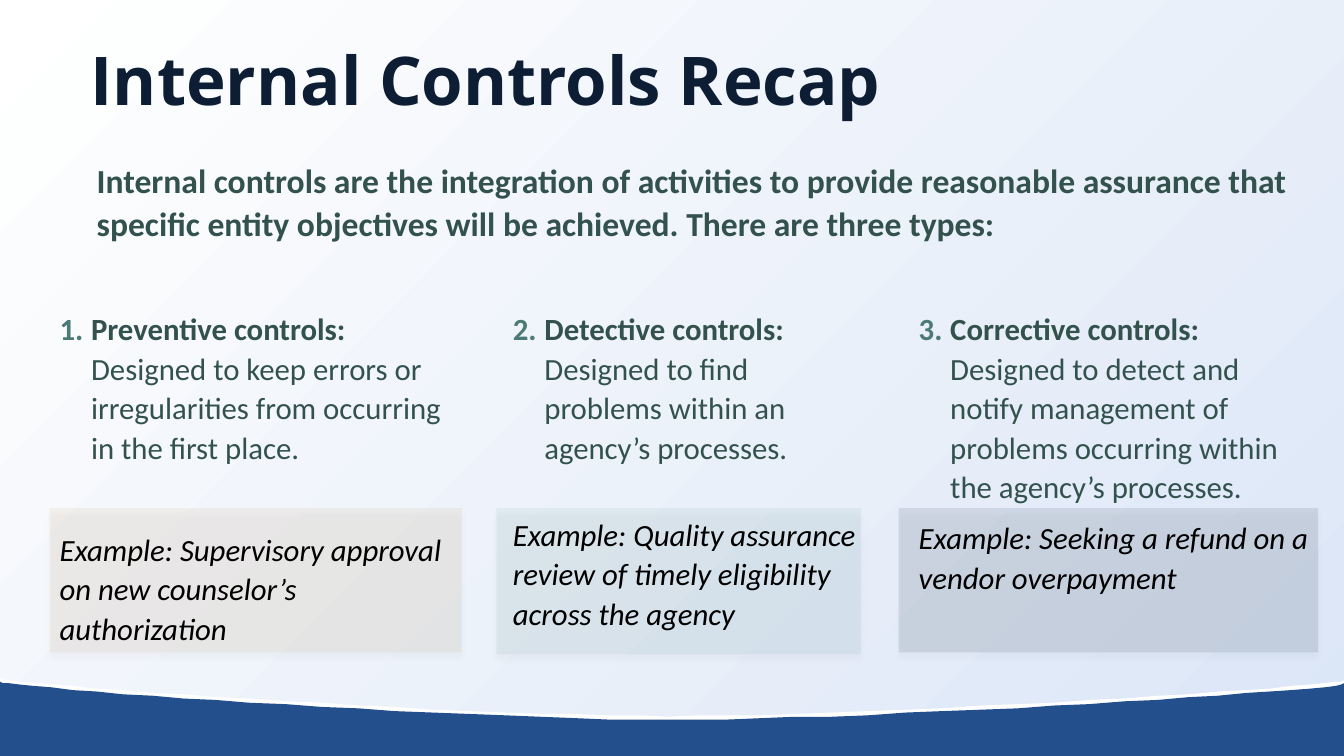
import dataclasses

import lxml.etree
import pptx
import pptx.dml.color
import pptx.enum.shapes
import pptx.enum.text
import pptx.oxml.ns
import pptx.util

Pt = pptx.util.Pt
qn = pptx.oxml.ns.qn
WIDE, HIGH = 960, 540
COLORS = {
    "navy": "0D1D34", "teal": "68A19B", "tan": "C7975E", "wave": "234F8D",
    "body": "33524E", "number": "4C7A76", "black": "000000",
    "white": "FFFFFF", "sky": "DBE6F6",
}


@dataclasses.dataclass
class Control:
    """One column; gap is the space between its meaning and its example."""
    name: str
    meaning: str
    example: str
    left: float
    width: float
    gap: float
    panel: tuple[float, float, float]
    color: str


CONTROLS = [
    Control("Preventive controls:",
            "Designed to keep errors or irregularities from occurring in the first place.",
            "Example: Supervisory approval on new counselor’s authorization",
            35.5, 301.5, 36.5, (35.5, 294.5, 103), "tan"),
    Control("Detective controls:",
            "Designed to find problems within an agency’s processes.",
            "Example: Quality assurance review of timely eligibility across the agency",
            359.3, 266.5, 26, (354.5, 260.5, 104.5), "teal"),
    Control("Corrective controls:",
            "Designed to detect and notify management of problems occurring within "
            "the agency’s processes.",
            "Example: Seeking a refund on a vendor overpayment",
            649.2, 299.5, 0, (642, 299.5, 103), "navy"),
]


def tint(name: str) -> pptx.dml.color.RGBColor:
    return pptx.dml.color.RGBColor.from_string(COLORS[name])


def child(parent, tag: str, **attrs):
    node = lxml.etree.SubElement(parent, qn(tag))
    for key, value in attrs.items():
        node.set(key, str(value))
    return node


def write(para, text: str, *, size: float = 22, color: str = "body",
          font: str = "Calibri", bold: bool = False, italic: bool = False) -> None:
    run = para.add_run()
    run.text = text
    run.font.size, run.font.name = Pt(size), font
    run.font.bold, run.font.italic = bold, italic
    run.font.color.rgb = tint(color)


def space(para, lines: float = 1.07, before: float = 0, after: float = 8) -> None:
    para.alignment = pptx.enum.text.PP_ALIGN.LEFT
    para.line_spacing = lines
    para.space_before, para.space_after = Pt(before), Pt(after)


def number(para, start: int) -> None:
    """Give the paragraph a hanging number."""
    props = para._p.get_or_add_pPr()
    props.set("marL", str(Pt(22.5)))
    props.set("indent", str(-Pt(22.5)))
    child(child(props, "a:buClr"), "a:srgbClr", val=COLORS["number"])
    child(props, "a:buAutoNum", type="arabicPeriod", startAt=start)


def add_box(slide, left: float, top: float, width: float, height: float):
    box = slide.shapes.add_textbox(Pt(left), Pt(top), Pt(width), Pt(height))
    box.text_frame.word_wrap = True
    return box.text_frame


def add_panel(slide, item: Control) -> None:
    left, width, height = item.panel
    panel = slide.shapes.add_shape(pptx.enum.shapes.MSO_SHAPE.RECTANGLE,
                                   Pt(left), Pt(363), Pt(width), Pt(height))
    panel.line.fill.background()
    panel.fill.solid()
    panel.fill.fore_color.rgb = tint(item.color)
    props = panel._element.spPr
    child(props.find(qn("a:solidFill"))[0], "a:alpha", val=10000)
    shade = child(child(props, "a:effectLst"), "a:outerShdw", blurRad=Pt(4),
                  dist=Pt(4), dir=5400000, algn="t", rotWithShape=0)
    child(child(shade, "a:srgbClr", val=COLORS["black"]), "a:alpha", val=25000)


def add_column(slide, item: Control, start: int) -> None:
    frame = add_box(slide, item.left, 216, item.width, 240)
    first = frame.paragraphs[0]
    number(first, start)
    space(first)
    write(first, item.name, bold=True)
    first.add_line_break()
    write(first, item.meaning)
    second = frame.add_paragraph()
    space(second, before=item.gap)
    write(second, item.example, color="black", italic=True)


def curve(points: list[tuple[float, float]], steps: int = 24) -> list[tuple[float, float]]:
    """Sample a cubic curve from its four control points."""
    result = []
    for step in range(steps + 1):
        t = step / steps
        parts = ((1 - t) ** 3, 3 * t * (1 - t) ** 2, 3 * t * t * (1 - t), t ** 3)
        result.append(tuple(sum(p * point[axis] for p, point in zip(parts, points))
                            for axis in (0, 1)))
    return result


def add_wave(slide, color: str, lift: float) -> None:
    left = curve([(0, 487), (0, 490.5), (317, 514), (477, 514)])
    right = curve([(477, 514), (637, 514), (WIDE, 492.5), (WIDE, 488.5)])
    edge = [(x, y - lift) for x, y in left + right[1:]]
    path = slide.shapes.build_freeform(*edge[0], scale=Pt(1))
    path.add_line_segments(edge[1:] + [(WIDE, HIGH), (0, HIGH)])
    wave = path.convert_to_shape()
    wave.shadow.inherit = False
    wave.fill.solid()
    wave.fill.fore_color.rgb = tint(color)
    wave.line.fill.background()


def set_title(slide) -> None:
    title = slide.shapes.title
    title.left, title.top, title.width, title.height = map(Pt, (57.6, 28.8, 854.6, 60.5))
    frame = title.text_frame
    frame.auto_size = pptx.enum.text.MSO_AUTO_SIZE.NONE
    frame.vertical_anchor = pptx.enum.text.MSO_ANCHOR.BOTTOM
    space(frame.paragraphs[0], lines=0.9, after=0)
    write(frame.paragraphs[0], "Internal Controls Recap", size=48,
          color="navy", font="Open Sans", bold=True)


def main() -> None:
    deck = pptx.Presentation()
    deck.slide_width, deck.slide_height = Pt(WIDE), Pt(HIGH)
    slide = deck.slides.add_slide(deck.slide_layouts[5])
    back = slide.background.fill
    back.gradient()
    back.gradient_angle = 135
    for stop, color in zip(back.gradient_stops, ("sky", "white")):
        stop.color.rgb = tint(color)
    add_wave(slide, "white", 2.5)
    add_wave(slide, "wave", 0)
    for item in CONTROLS:
        add_panel(slide, item)
    set_title(slide)
    intro = add_box(slide, 62, 108.7, 868.3, 72).paragraphs[0]
    space(intro)
    write(intro, "Internal controls are the integration of activities to provide "
          "reasonable assurance that specific entity objectives will be achieved. "
          "There are three types:", size=24, bold=True)
    for start, item in enumerate(CONTROLS, 1):
        add_column(slide, item, start)
    deck.save("out.pptx")


if __name__ == "__main__":
    main()
